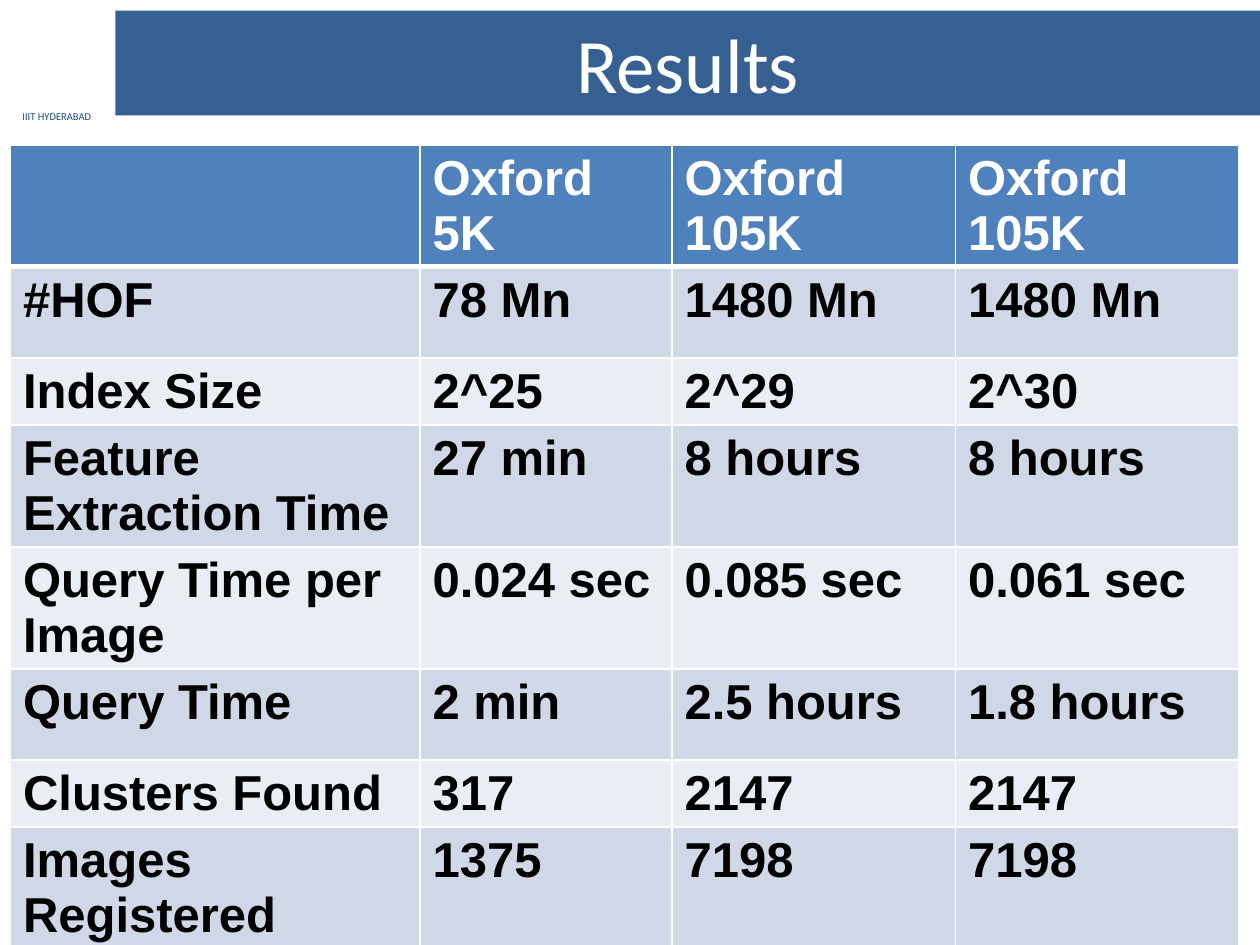
from lxml import etree
from pptx import Presentation
from pptx.dml.color import RGBColor
from pptx.enum.shapes import MSO_SHAPE
from pptx.enum.text import MSO_ANCHOR, PP_ALIGN
from pptx.oxml.ns import qn
from pptx.util import Pt

RECT = MSO_SHAPE.RECTANGLE
MIDDLE = MSO_ANCHOR.MIDDLE
CENTER = PP_ALIGN.CENTER

WHITE = RGBColor(0xFF, 0xFF, 0xFF)
BLACK = RGBColor(0, 0, 0)
NAVY = RGBColor(0x1F, 0x49, 0x7D)
BANNER = RGBColor(0x37, 0x60, 0x92)
HEAD = RGBColor(0x4F, 0x81, 0xBD)
BANDS = (RGBColor(0xD0, 0xD8, 0xE8), RGBColor(0xE9, 0xED, 0xF4))

WIDTHS = (234, 144, 162, 162)
TALL, SHORT = 52, 28.8
HEIGHTS = (TALL, TALL, SHORT, TALL, TALL, TALL, SHORT, SHORT)
RESULTS = (
    ("", "Oxford 5K", "Oxford 105K", "Oxford 105K"),
    ("#HOF", "78 Mn", "1480 Mn", "1480 Mn"),
    ("Index Size", "2^25", "2^29", "2^30"),
    ("Feature Extraction Time", "27 min", "8 hours", "8 hours"),
    ("Query Time per Image", "0.024 sec", "0.085 sec", "0.061 sec"),
    ("Query Time", "2 min", "2.5 hours", "1.8 hours"),
    ("Clusters Found", "317", "2147", "2147"),
    ("Images Registered", "1375", "7198", "7198"),
)


class Painter:
    """Holds the text style and the current slide."""

    title_font = "Calibri"
    table_font = "Arial"

    def __init__(self, slide):
        self.slide = slide

    def style(self, para, font, size, color, bold=False):
        for run in para.runs:
            run.font.name = font
            run.font.size = Pt(size)
            run.font.color.rgb = color
            run.font.bold = bold

    def box(self, text, left, top, width, height, size, color,
            fill=None, line=None, wrap=True):
        shape = self.slide.shapes.add_shape(
            RECT, Pt(left), Pt(top), Pt(width), Pt(height))
        shape.shadow.inherit = False
        if fill is None:
            shape.fill.background()
        else:
            shape.fill.solid()
            shape.fill.fore_color.rgb = fill
        if line is None:
            shape.line.fill.background()
        else:
            shape.line.color.rgb = line
            shape.line.width = Pt(0.75)
        frame = shape.text_frame
        frame.word_wrap = wrap
        frame.vertical_anchor = MIDDLE
        frame.text = text
        para = frame.paragraphs[0]
        para.alignment = CENTER
        self.style(para, self.title_font, size, color)

    def border(self, cell, side, width):
        props = cell._tc.get_or_add_tcPr()
        line = etree.SubElement(props, qn("a:ln" + side), w=str(Pt(width)))
        fill = etree.SubElement(line, qn("a:solidFill"))
        etree.SubElement(fill, qn("a:srgbClr"), val=str(WHITE))

    def cell(self, cell, text, fill, color, base, top):
        for side, width in (("L", 1), ("R", 1), ("T", top), ("B", base)):
            self.border(cell, side, width)
        cell.fill.solid()
        cell.fill.fore_color.rgb = fill
        cell.text = text
        self.style(cell.text_frame.paragraphs[0], self.table_font, 28,
                   color, True)

    def table(self, rows, left, top, widths, heights):
        table = self.slide.shapes.add_table(
            len(rows), len(widths), Pt(left), Pt(top),
            Pt(sum(widths)), Pt(sum(heights))).table
        for col, width in zip(table.columns, widths):
            col.width = Pt(width)
        for r, (row, height) in enumerate(zip(rows, heights)):
            table.rows[r].height = Pt(height)
            fill = BANDS[(r - 1) % 2] if r else HEAD
            color = BLACK if r else WHITE
            base = 1 if r else 3
            above = 3 if r == 1 else 1
            for c, text in enumerate(row):
                self.cell(table.cell(r, c), text, fill, color, base, above)


def main():
    deck = Presentation()
    deck.slide_width, deck.slide_height = Pt(720), Pt(540)
    paint = Painter(deck.slides.add_slide(deck.slide_layouts[6]))

    # Institute label and title banner
    paint.box("IIIT HYDERABAD", 1.2, 59, 62.5, 14.5, 6, NAVY,
              line=WHITE, wrap=False)
    paint.box("Results", 66, 6, 654, 60, 44, WHITE, fill=BANNER)

    # Results table
    paint.table(RESULTS, 6, 82.8, WIDTHS, HEIGHTS)

    deck.save("out.pptx")


if __name__ == "__main__":
    main()
